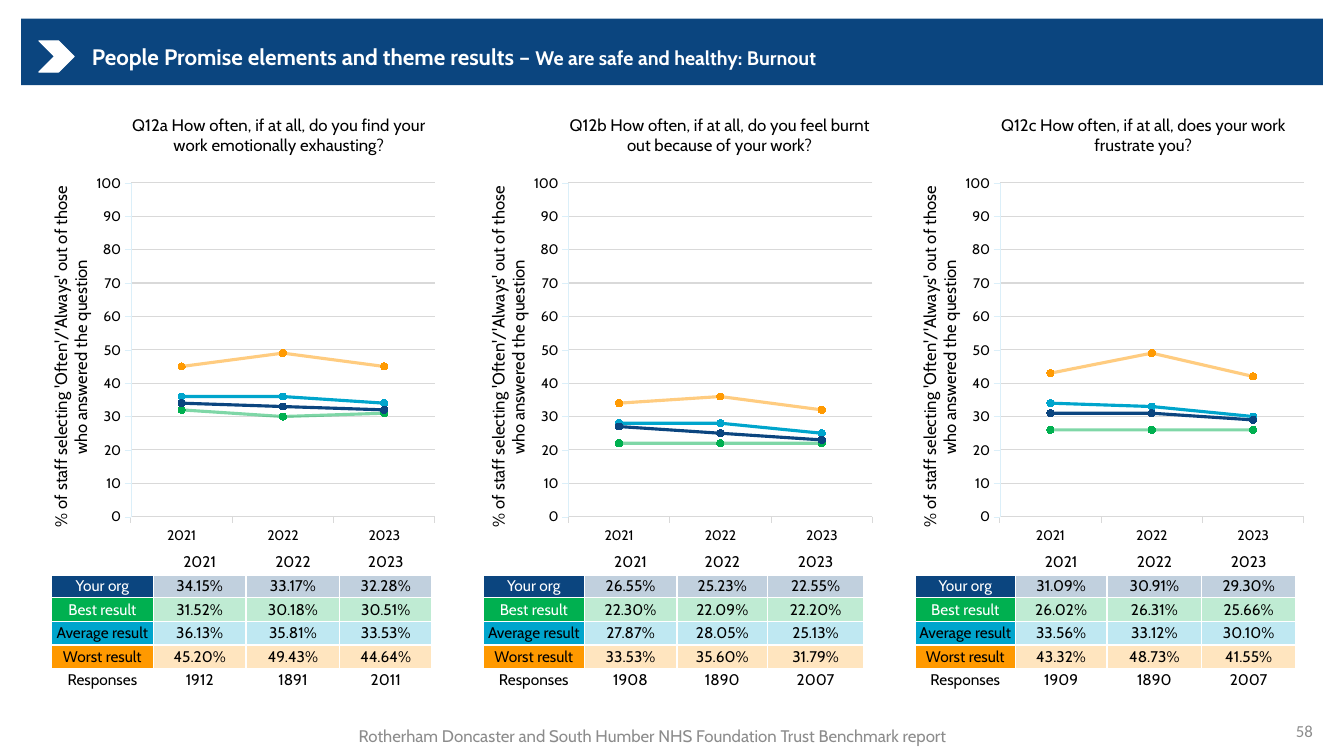
from dataclasses import dataclass

from lxml.etree import SubElement
from pptx import Presentation
from pptx.chart.data import CategoryChartData
from pptx.dml.color import RGBColor
from pptx.enum.chart import XL_CHART_TYPE, XL_MARKER_STYLE, XL_TICK_MARK
from pptx.enum.shapes import MSO_SHAPE
from pptx.enum.text import MSO_ANCHOR, PP_ALIGN
from pptx.oxml import parse_xml
from pptx.oxml.ns import nsdecls, qn
from pptx.util import Inches, Pt


@dataclass(frozen=True)
class Theme:
    navy: str = "0B457F"
    green: str = "00B050"
    blue: str = "00A5CC"
    orange: str = "FF9900"
    orange_line: str = "FF9A02"
    white: str = "FFFFFF"
    black: str = "000000"
    grey: str = "8C8C8C"
    grid: str = "D9D9D9"
    axis: str = "DBEFF9"
    font: str = "Cabin"
    number_font: str = "Calibri"
    heading: int = 16
    subheading: int = 14
    caption: int = 12
    cell: int = 11
    tick: int = 10


@dataclass(frozen=True)
class Panel:
    question: str
    chart_left: float
    columns: tuple
    results: dict
    responses: tuple


THEME = Theme()
WIDTH, HEIGHT = Inches(13.33), Inches(7.5)
YEARS = ("2021", "2022", "2023")
AXIS_TITLE = "% of staff selecting 'Often'/'Always' out of those who answered the question"
TABLE_LEFT, TABLE_PITCH, TABLE_TOP, ROW_HEIGHT = 3.83, 32.14, 72.8, 3.13
ROW_STYLES = {
    "Your org": (THEME.navy, THEME.white),
    "Best result": (THEME.green, THEME.white),
    "Average result": (THEME.blue, THEME.black),
    "Worst result": (THEME.orange, THEME.black),
}
LINE_STYLES = (
    ("Average result", THEME.blue, 100),
    ("Best result", THEME.green, 50),
    ("Worst result", THEME.orange_line, 50),
    ("Your org", THEME.navy, 100),
)
PANELS = (
    Panel("Q12a How often, if at all, do you find your work emotionally exhausting?",
          3.45, (7.58, 6.9, 6.98, 6.83),
          {"Your org": (34.15, 33.17, 32.28), "Best result": (31.52, 30.18, 30.51),
           "Average result": (36.13, 35.81, 33.53), "Worst result": (45.20, 49.43, 44.64)},
          (1912, 1891, 2011)),
    Panel("Q12b How often, if at all, do you feel burnt out because of your work?",
          36.0, (7.5, 6.9, 6.75, 7.13),
          {"Your org": (26.55, 25.23, 22.55), "Best result": (22.30, 22.09, 22.20),
           "Average result": (27.87, 28.05, 25.13), "Worst result": (33.53, 35.60, 31.79)},
          (1908, 1890, 2007)),
    Panel("Q12c How often, if at all, does your work frustrate you?",
          68.1, (7.43, 6.83, 7.05, 6.98),
          {"Your org": (31.09, 30.91, 29.30), "Best result": (26.02, 26.31, 25.66),
           "Average result": (33.56, 33.12, 30.10), "Worst result": (43.32, 48.73, 41.55)},
          (1909, 1890, 2007)),
)


def across(percent):
    return round(WIDTH * percent / 100)


def down(percent):
    return round(HEIGHT * percent / 100)


def frame(left, top, width, height):
    return across(left), down(top), across(width), down(height)


def style_font(font, size, color, name=THEME.font, bold=False):
    font.size, font.name, font.bold = Pt(size), name, bold
    font.color.rgb = RGBColor.from_string(color)


def set_opacity(fill_parent, percent):
    color = next(fill_parent.iter(qn("a:srgbClr")))
    SubElement(color, qn("a:alpha")).set("val", str(percent * 1000))


def add_block(page, preset, area):
    block = page.shapes.add_shape(preset, *frame(*area))
    block.shadow.inherit = False
    block.fill.solid()
    return block


def add_text(page, area, spans, color, name=THEME.font, bold=False, align=PP_ALIGN.LEFT):
    box = page.shapes.add_textbox(*frame(*area))
    box.text_frame.word_wrap = True
    box.text_frame.vertical_anchor = MSO_ANCHOR.MIDDLE
    para = box.text_frame.paragraphs[0]
    para.alignment = align
    style_font(para.font, spans[0][1], color, name, bold)
    for text, size in spans:
        span = para.add_run()
        span.text = text
        if len(spans) > 1:
            span.font.size = Pt(size)


def add_header(page):
    banner = add_block(page, MSO_SHAPE.RECTANGLE, (1.58, 2.47, 96.85, 8.8))
    banner.fill.fore_color.rgb = RGBColor.from_string(THEME.navy)
    banner.line.fill.background()
    chevron = add_block(page, MSO_SHAPE.CHEVRON, (2.89, 5.4, 2.63, 4.13))
    chevron.fill.fore_color.rgb = RGBColor.from_string(THEME.white)
    chevron.line.color.rgb = RGBColor.from_string(THEME.white)
    chevron.line.width = Pt(0.75)
    add_text(page, (6.1, 4.5, 72.09, 5.87),
             (("People Promise elements and theme results – ", THEME.heading),
              ("We are safe and healthy: Burnout", THEME.subheading)),
             THEME.white, bold=True)


def fill_cell(cell, text, color, fill=None, opacity=100, bottom=1):
    cell.margin_left = cell.margin_right = cell.margin_top = cell.margin_bottom = 0
    cell.vertical_anchor = MSO_ANCHOR.MIDDLE
    cell.text = text
    para = cell.text_frame.paragraphs[0]
    para.alignment = PP_ALIGN.CENTER
    style_font(para.font, THEME.cell, color)
    properties = cell._tc.get_or_add_tcPr()
    for side, points in (("L", 1), ("R", 1), ("T", 1), ("B", bottom)):
        properties.append(parse_xml(
            f'<a:ln{side} {nsdecls("a")} w="{Pt(points)}"><a:solidFill>'
            f'<a:srgbClr val="{THEME.white}"/></a:solidFill></a:ln{side}>'))
    if fill is None:
        cell.fill.background()
        return
    cell.fill.solid()
    cell.fill.fore_color.rgb = RGBColor.from_string(fill)
    if opacity < 100:
        set_opacity(properties.find(qn("a:solidFill")), opacity)


def add_results_table(page, panel, left):
    rows = [("", YEARS)]
    rows += [(label, [f"{value:.2f}%" for value in panel.results[label]]) for label in ROW_STYLES]
    rows.append(("Responses", [str(count) for count in panel.responses]))
    area = frame(left, TABLE_TOP, sum(panel.columns), ROW_HEIGHT * len(rows))
    table = page.shapes.add_table(len(rows), len(panel.columns), *area).table
    table.first_row = table.horz_banding = False
    for column, width in zip(table.columns, panel.columns):
        column.width = across(width)
    for index, (label, values) in enumerate(rows):
        table.rows[index].height = down(ROW_HEIGHT)
        fill, label_color = ROW_STYLES.get(label, (None, THEME.black))
        bottom = 3 if index == 0 else 1
        fill_cell(table.cell(index, 0), label, label_color, fill, bottom=bottom)
        for column, value in enumerate(values, 1):
            fill_cell(table.cell(index, column), value, THEME.black, fill, 25, bottom)


def set_layout(element, **shares):
    layout = element.find(qn("c:layout"))
    if layout is None:
        layout = element.makeelement(qn("c:layout"))
        element.insert(0, layout)
    manual = SubElement(layout, qn("c:manualLayout"))
    if "w" in shares:
        SubElement(manual, qn("c:layoutTarget")).set("val", "inner")
    for mode in ("xMode", "yMode"):
        SubElement(manual, qn(f"c:{mode}")).set("val", "edge")
    for key, share in shares.items():
        SubElement(manual, qn(f"c:{key}")).set("val", str(share))


def write_title(title, text, x, y):
    title.text_frame.text = text
    style_font(title.text_frame.paragraphs[0].font, THEME.caption, THEME.black)
    set_layout(title._element, x=x, y=y)


def style_line(line, color, width):
    line.color.rgb = RGBColor.from_string(color)
    line.width = Pt(width)


def style_axes(chart):
    for axis, color, width in ((chart.category_axis, THEME.grid, 0.75),
                               (chart.value_axis, THEME.axis, 0.25)):
        style_font(axis.tick_labels.font, THEME.tick, THEME.black)
        style_line(axis.format.line, color, width)
        axis.major_tick_mark = XL_TICK_MARK.OUTSIDE
        axis.minor_tick_mark = XL_TICK_MARK.NONE
    scale = chart.value_axis
    scale.minimum_scale, scale.maximum_scale, scale.major_unit = 0, 100, 10
    scale.tick_labels.number_format = "0"
    scale.tick_labels.number_format_is_linked = False
    style_line(scale.major_gridlines.format.line, THEME.grid, 0.75)
    write_title(scale.axis_title, AXIS_TITLE, 0, 0.2)
    scale.axis_title.text_frame._txBody.bodyPr.set("rot", "-5400000")


def add_trend_chart(page, panel):
    data = CategoryChartData()
    data.categories = YEARS
    for number, (label, _, _) in enumerate(LINE_STYLES, 1):
        data.add_series(f"Series {number}", [round(value) for value in panel.results[label]])
    area = frame(panel.chart_left, 12.93, 30.83, 58.93)
    chart = page.shapes.add_chart(XL_CHART_TYPE.LINE_MARKERS, *area, data).chart
    style_font(chart.font, THEME.tick, THEME.black)
    chart.has_legend = False
    write_title(chart.chart_title, panel.question, 0.2, 0.03)
    style_axes(chart)
    plot = chart.plots[0]
    plot.vary_by_categories = False
    set_layout(chart._chartSpace.chart.plotArea, x=0.204, y=0.193, w=0.734, h=0.756)
    for series, (_, color, opacity) in zip(plot.series, LINE_STYLES):
        series.smooth = False
        style_line(series.format.line, color, 2.25)
        if opacity < 100:
            set_opacity(series._element.spPr, opacity)
        series.marker.style, series.marker.size = XL_MARKER_STYLE.CIRCLE, 5
        series.marker.format.fill.solid()
        series.marker.format.fill.fore_color.rgb = RGBColor.from_string(color)
        style_line(series.marker.format.line, color, 0.75)


def main():
    deck = Presentation()
    deck.slide_width, deck.slide_height = WIDTH, HEIGHT
    page = deck.slides.add_slide(deck.slide_layouts[6])
    add_header(page)
    for index, panel in enumerate(PANELS):
        add_results_table(page, panel, TABLE_LEFT + TABLE_PITCH * index)
        add_trend_chart(page, panel)
    add_text(page, (75.92, 94, 22.5, 5.33), (("58", THEME.caption),),
             THEME.grey, THEME.number_font, align=PP_ALIGN.RIGHT)
    add_text(page, (22.13, 94.67, 52.89, 5.2),
             (("Rotherham Doncaster and South Humber NHS Foundation Trust Benchmark report",
               THEME.caption),), THEME.grey, align=PP_ALIGN.CENTER)
    deck.save("out.pptx")


if __name__ == "__main__":
    main()
